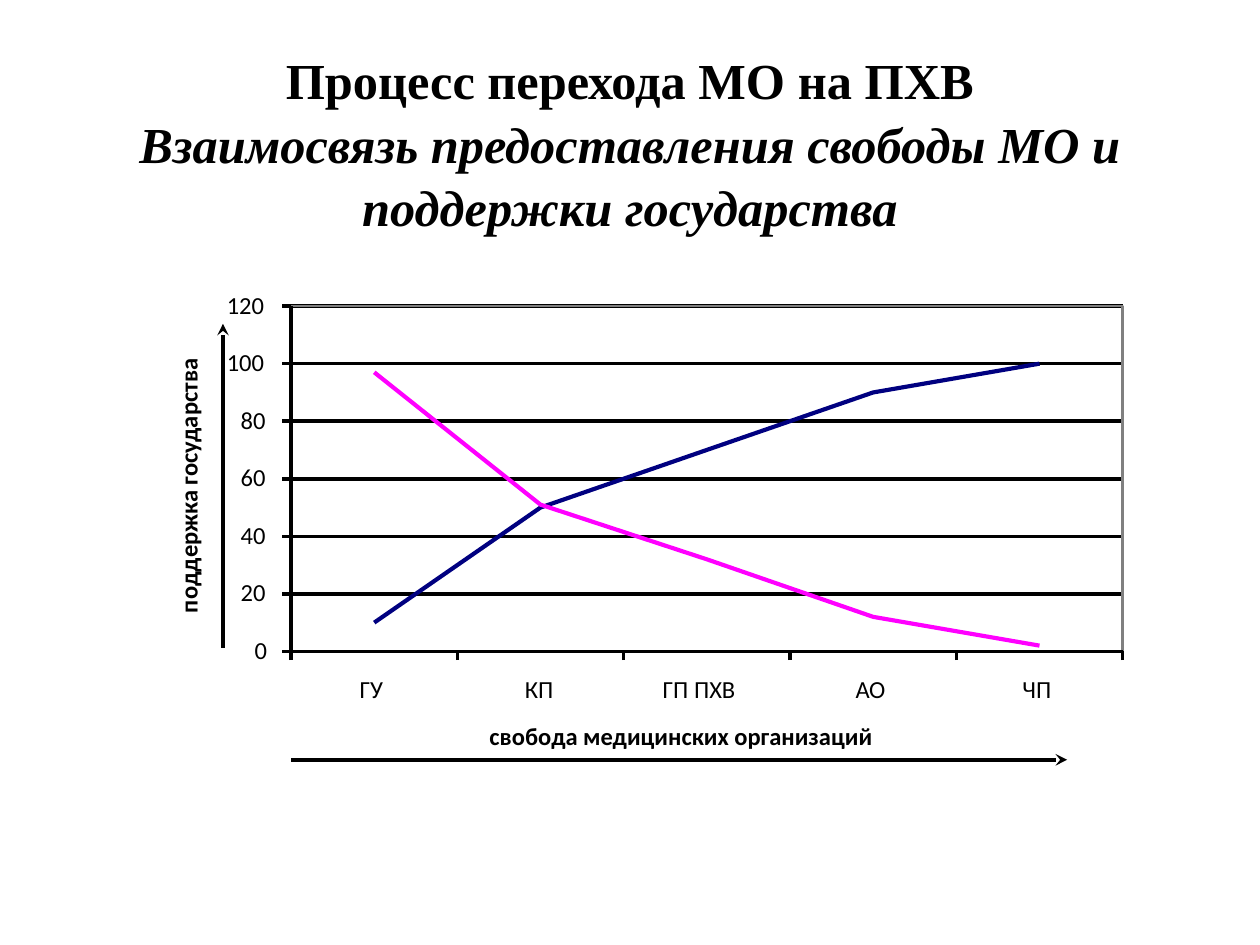
"""Build a slide relating provider freedom to state support as two curves."""
from lxml.etree import SubElement
from pptx import Presentation
from pptx.dml.color import RGBColor
from pptx.enum.shapes import MSO_CONNECTOR, MSO_SHAPE
from pptx.enum.text import MSO_ANCHOR, MSO_AUTO_SIZE, PP_ALIGN
from pptx.oxml.ns import qn
from pptx.util import Inches, Pt

COLORS = {"black": "000000", "frame": "808080", "freedom": "000080", "support": "FF00FF"}
TITLE = ("Процесс перехода МО на ПХВ",
         "Взаимосвязь предоставления свободы МО и поддержки государства")
CATEGORIES = [("ГУ", 0.23), ("КП", 0.25), ("ГП ПХВ", 0.7), ("АО", 0.28), ("ЧП", 0.27)]
SERIES = {"freedom": [10, 50, 70, 90, 100], "support": [97, 51, 32, 12, 2]}
X_TITLE, Y_TITLE = "свобода медицинских организаций", "поддержка государства"

AXIS_MAX, AXIS_STEP = 120, 20
LEFT, TOP, WIDTH, HEIGHT = 2.31, 2.43, 6.6, 2.74
RIGHT, BOTTOM = LEFT + WIDTH, TOP + HEIGHT
SLOT = WIDTH / len(CATEGORIES)
TICK, DIGIT, LABEL_HEIGHT = 0.07, 0.11, 0.23

presentation = Presentation()
presentation.slide_width, presentation.slide_height = Inches(10), Inches(7.5)
slide = presentation.slides.add_slide(presentation.slide_layouts[6])


def color(name):
    return RGBColor.from_string(COLORS[name])


def value_y(value):
    return BOTTOM - HEIGHT * value / AXIS_MAX


def style_line(shape, name, width):
    shape.line.color.rgb = color(name)
    shape.line.width = Pt(width)


def add_line(x1, y1, x2, y2, width=0, arrow=False):
    line = slide.shapes.add_connector(MSO_CONNECTOR.STRAIGHT, *map(Inches, (x1, y1, x2, y2)))
    style_line(line, "black", width)
    if arrow:
        SubElement(line.line._get_or_add_ln(), qn("a:tailEnd"), type="stealth")
    SubElement(line._element.spPr, qn("a:effectLst"))


def add_label(text, center_x, top, width, bold=False, rotation=0):
    box = slide.shapes.add_textbox(
        *map(Inches, (center_x - width / 2, top, width, LABEL_HEIGHT)))
    box.rotation = rotation
    frame = box.text_frame
    frame.margin_left = frame.margin_right = frame.margin_top = frame.margin_bottom = 0
    frame.word_wrap = False
    frame.auto_size = MSO_AUTO_SIZE.SHAPE_TO_FIT_TEXT
    paragraph = frame.paragraphs[0]
    paragraph.text = text
    font = paragraph.font
    font.name, font.size, font.bold = "Calibri", Pt(14), bold
    font.color.rgb = color("black")


def add_title():
    frame = slide.shapes.add_textbox(*map(Inches, (0.5, 0.3, 9, 1.65))).text_frame
    frame.word_wrap = True
    frame.vertical_anchor = MSO_ANCHOR.MIDDLE
    paragraph = frame.paragraphs[0]
    paragraph.alignment = PP_ALIGN.CENTER
    paragraph.line_spacing = 1.05
    font = paragraph.font
    font.name, font.size, font.bold = "Times New Roman", Pt(28.8), True
    font.color.rgb = color("black")
    heading, subheading = TITLE
    paragraph.add_run().text = heading
    paragraph.add_line_break()
    run = paragraph.add_run()
    run.text = subheading
    run.font.italic = True


def add_frame():
    frame = slide.shapes.add_shape(
        MSO_SHAPE.RECTANGLE, *map(Inches, (LEFT, TOP, WIDTH, HEIGHT)))
    frame.shadow.inherit = False
    frame.fill.background()
    style_line(frame, "frame", 1.25)


def add_curve(name, values):
    points = [(Inches(LEFT + SLOT * (index + 0.5)), Inches(value_y(value)))
              for index, value in enumerate(values)]
    builder = slide.shapes.build_freeform(*points[0])
    builder.add_line_segments(points[1:], close=False)
    curve = builder.convert_to_shape()
    curve.shadow.inherit = False
    curve.fill.background()
    style_line(curve, name, 2.38)


def main():
    add_title()
    add_line(LEFT, 6.03, 8.47, 6.03, 2.25, arrow=True)
    add_line(1.77, 5.14, 1.77, 2.57, 2.25, arrow=True)
    ticks = range(0, AXIS_MAX + 1, AXIS_STEP)
    for value in ticks[1:]:
        add_line(LEFT, value_y(value), RIGHT, value_y(value))
    add_frame()
    add_line(LEFT, TOP, LEFT, BOTTOM)
    add_line(LEFT, BOTTOM, RIGHT, BOTTOM)
    for value in ticks:
        add_line(LEFT - TICK, value_y(value), LEFT, value_y(value))
    for index in range(len(CATEGORIES) + 1):
        x = LEFT + SLOT * index
        add_line(x, BOTTOM + TICK, x, BOTTOM)
    for name, values in SERIES.items():
        add_curve(name, values)
    for value in ticks:
        width = DIGIT * len(str(value))
        add_label(str(value), 2.13 - width / 2, value_y(value) - 0.13, width)
    for index, (text, width) in enumerate(CATEGORIES):
        add_label(text, LEFT + SLOT * (index + 0.5), 5.35, width)
    add_label(X_TITLE, 5.6, 5.72, 3.43, bold=True)
    add_label(Y_TITLE, 1.49, 3.6, 2.3, bold=True, rotation=270)
    presentation.save("out.pptx")


if __name__ == "__main__":
    main()
